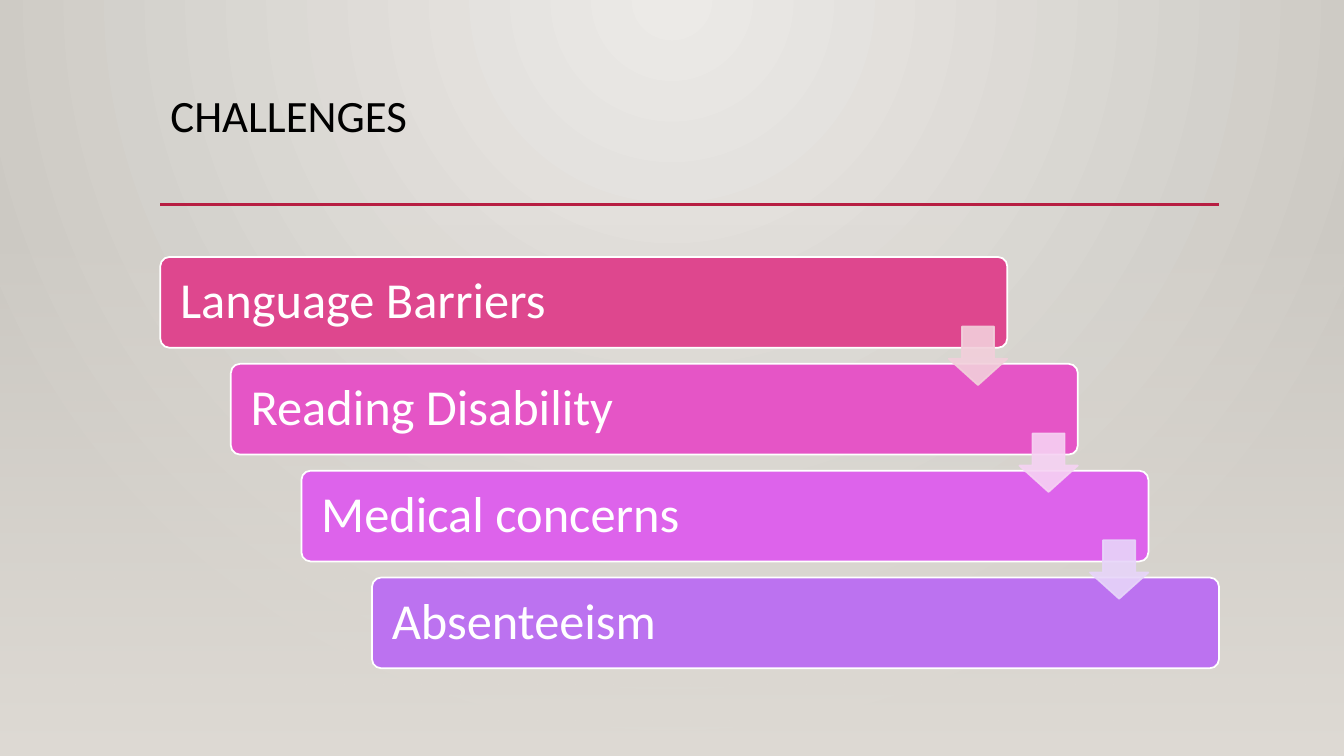
import lxml.etree
import pptx
import pptx.dml.color
import pptx.enum.shapes
import pptx.enum.text
import pptx.oxml
import pptx.oxml.ns
import pptx.util

Inches = pptx.util.Inches
Pt = pptx.util.Pt
qn = pptx.oxml.ns.qn
Shapes = pptx.enum.shapes.MSO_SHAPE
Anchor = pptx.enum.text.MSO_ANCHOR

COLORS = {
    "center": "ECEAE7", "edge": "CAC7C1", "floor": "DFDBD5",
    "rule": "B71E42", "title": "000000", "white": "FFFFFF",
}
# Wording, bar colour and colour of the arrow leading to the next bar
CHALLENGES = [
    ("Language Barriers", "DE478E", "F2CFDB"),
    ("Reading Disability", "E555C6", "F6D2F3"),
    ("Medical concerns", "DD63EB", "E7D5F9"),
    ("Absenteeism", "BC72F0", None),
]
LEFT, RIGHT = 1.59, 12.09
BAR_TOP, BAR_WIDTH, BAR_HEIGHT = 2.55, 8.4, 0.9
STEP_X, STEP_Y = 0.7, 1.06
ARROW_SIZE, ARROW_DROP = 0.58, 0.69


def rgb(color):
    return pptx.dml.color.RGBColor.from_string(color)


def add_alpha(parent, percent):
    for color in parent.iter(qn("a:srgbClr")):
        lxml.etree.SubElement(color, qn("a:alpha"), val=str(percent * 1000))


def replace_solid_fill(parent, stops, direction):
    """Swap the solid fill in parent for a gradient of (position, colour, opacity) stops."""
    stop_xml = "".join(
        f'<a:gs pos="{position * 1000}"><a:srgbClr val="{color}">'
        f'<a:alpha val="{opacity * 1000}"/></a:srgbClr></a:gs>'
        for position, color, opacity in stops)
    gradient = pptx.oxml.parse_xml(
        f'<a:gradFill {pptx.oxml.ns.nsdecls("a")} rotWithShape="1">'
        f"<a:gsLst>{stop_xml}</a:gsLst>{direction}</a:gradFill>")
    solid = parent.find(".//" + qn("a:solidFill"))
    solid.getparent().replace(solid, gradient)


class SlideBuilder:
    def __init__(self, presentation):
        self.font = "Calibri"
        self.slide = presentation.slides.add_slide(presentation.slide_layouts[5])

    def background(self):
        self.slide.background.fill.solid()
        self.slide.background.fill.fore_color.rgb = rgb(COLORS["center"])
        replace_solid_fill(
            self.slide.element.find(".//" + qn("p:bg")),
            [(0, COLORS["center"], 100), (100, COLORS["edge"], 100)],
            '<a:path path="circle"><a:fillToRect l="43000" t="0" r="43000" b="100000"/></a:path>')

    def shape(self, kind, left, top, width, height, color):
        shape = self.slide.shapes.add_shape(
            kind, Inches(left), Inches(top), Inches(width), Inches(height))
        shape.shadow.inherit = False
        shape.fill.solid()
        shape.fill.fore_color.rgb = rgb(color)
        return shape

    def outline(self, shape, color):
        shape.line.color.rgb = rgb(color)
        shape.line.width = Pt(1.25)

    def text(self, shape, wording, size, color):
        frame = shape.text_frame
        frame.text = wording
        frame.word_wrap = True
        paragraph = frame.paragraphs[0]
        paragraph.alignment = pptx.enum.text.PP_ALIGN.LEFT
        paragraph.line_spacing = 0.9
        font = paragraph.runs[0].font
        font.name = self.font
        font.size = Pt(size)
        font.color.rgb = rgb(color)
        return frame

    def title(self, wording):
        title = self.slide.shapes.title
        title.left, title.top = Inches(LEFT), Inches(0.88)
        title.width, title.height = Inches(RIGHT - LEFT), Inches(1.15)
        frame = self.text(title, wording, 32, COLORS["title"])
        frame.vertical_anchor = Anchor.TOP
        frame.auto_size = pptx.enum.text.MSO_AUTO_SIZE.NONE

    def rule(self, top):
        rule = self.slide.shapes.add_connector(
            pptx.enum.shapes.MSO_CONNECTOR.STRAIGHT,
            Inches(LEFT), Inches(top), Inches(RIGHT), Inches(top))
        rule.line.color.rgb = rgb(COLORS["rule"])
        rule.line.width = Pt(2.5)
        lxml.etree.SubElement(rule.element.spPr, qn("a:effectLst"))

    def floor(self):
        """Fade the lower part of the slide from clear to a light tint."""
        floor = self.shape(Shapes.RECTANGLE, 0, 2.21, 13.33, 5.29, COLORS["floor"])
        floor.line.fill.background()
        replace_solid_fill(
            floor.element.spPr,
            [(0, COLORS["floor"], 0), (100, COLORS["floor"], 100)],
            '<a:lin ang="5400000" scaled="0"/>')

    def bar(self, left, top, wording, color):
        bar = self.shape(Shapes.ROUNDED_RECTANGLE, left, top, BAR_WIDTH, BAR_HEIGHT, color)
        bar.adjustments[0] = 0.1
        self.outline(bar, COLORS["white"])
        frame = self.text(bar, wording, 36, COLORS["white"])
        frame.vertical_anchor = Anchor.MIDDLE
        frame.margin_left = frame.margin_right = Inches(0.17)

    def arrow(self, left, top, color):
        arrow = self.shape(Shapes.DOWN_ARROW, left, top, ARROW_SIZE, ARROW_SIZE, color)
        arrow.adjustments[0] = 0.55
        arrow.adjustments[1] = 0.45
        self.outline(arrow, color)
        add_alpha(arrow.element.spPr, 90)


def main():
    presentation = pptx.Presentation()
    presentation.slide_width = Inches(13.33)
    presentation.slide_height = Inches(7.5)
    builder = SlideBuilder(presentation)
    builder.background()
    builder.title("CHALLENGES")
    builder.rule(2.03)
    builder.floor()

    steps = [(LEFT + index * STEP_X, BAR_TOP + index * STEP_Y, *challenge)
             for index, challenge in enumerate(CHALLENGES)]
    for left, top, wording, color, _ in steps:
        builder.bar(left, top, wording, color)
    for left, top, _, _, arrow_color in steps[:-1]:
        builder.arrow(left + BAR_WIDTH - ARROW_SIZE, top + ARROW_DROP, arrow_color)

    presentation.save("out.pptx")


if __name__ == "__main__":
    main()
